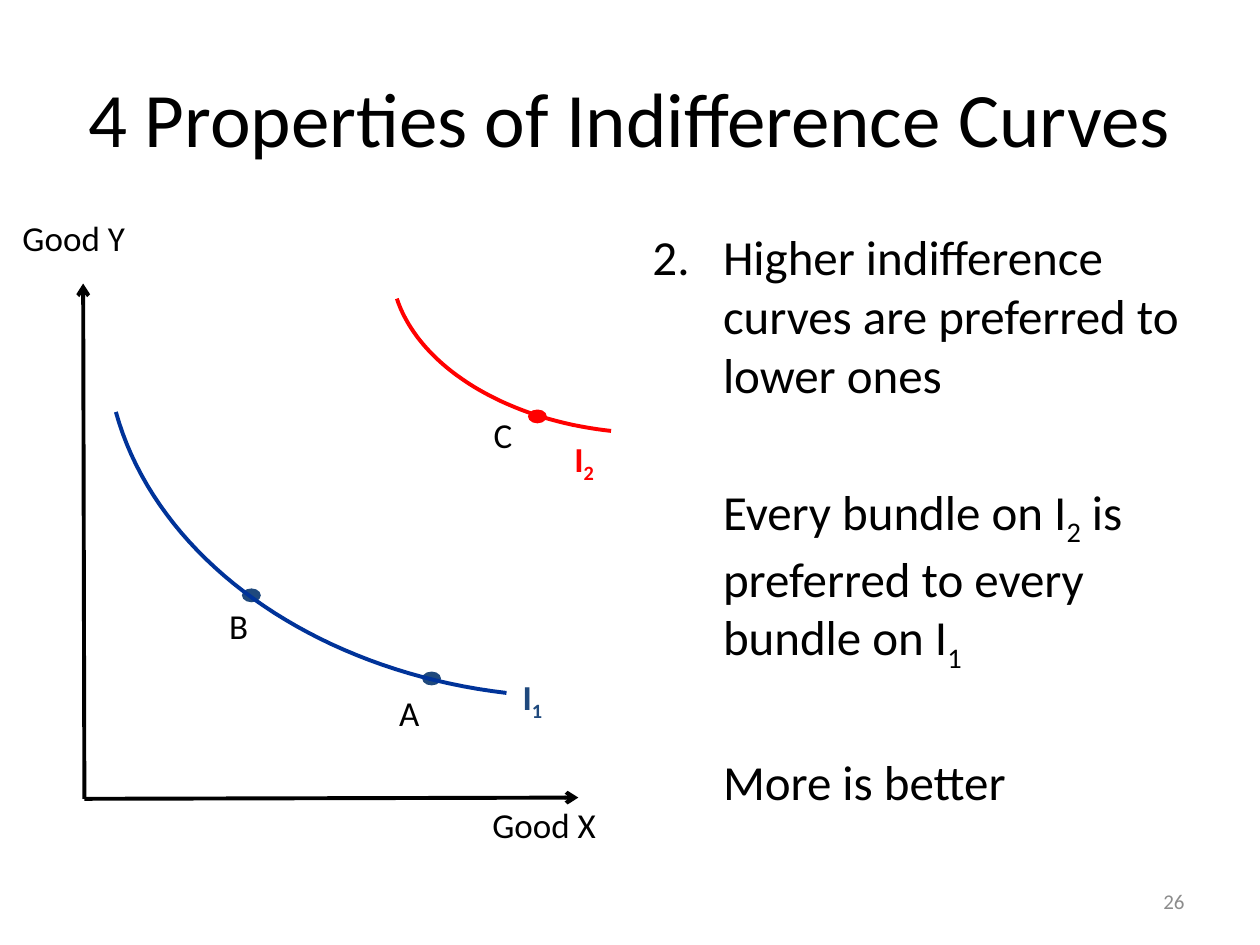
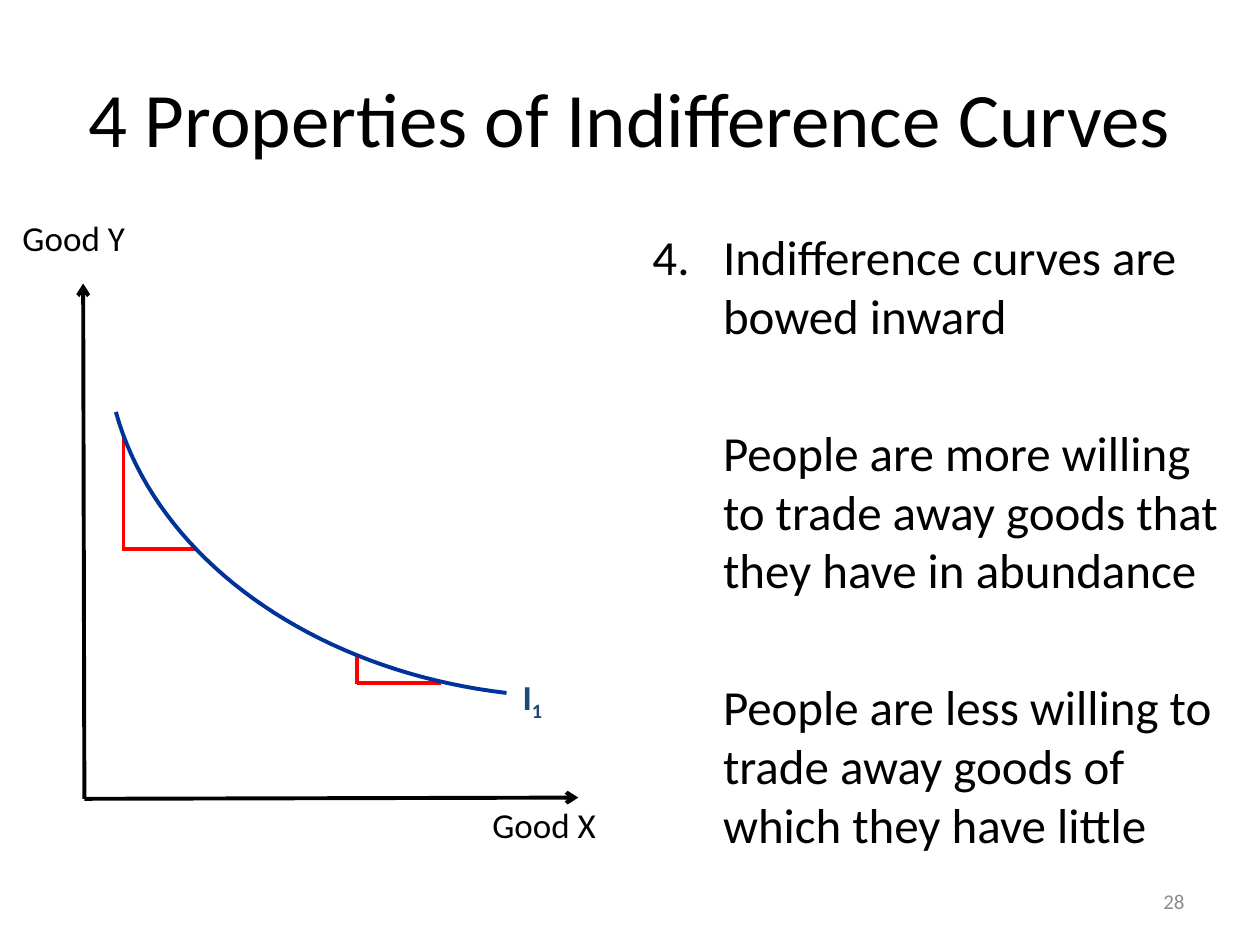
from lxml import etree
from pptx import Presentation
from pptx import util as u
from pptx.dml.color import RGBColor
from pptx.enum import shapes, text
from pptx.oxml.ns import qn

PX = 9144  # 100 px to the inch
FONT = "Calibri"
BLACK, RED, BLUE, NAVY, GREY = "000000", "FF0000", "003399", "1F497D", "8C8C8C"
LINE_WIDTH = u.Pt(2.25)
CURVE_STEPS = 40


def colour(value):
    return RGBColor.from_string(value)


def write(page, paragraphs, place, size=20, ink=BLACK, bold=False, align="LEFT",
          anchor="TOP", wrap=True, indent=0, number=None, gap=0):
    """Add a text box; parts between bars are set as subscripts."""
    box = page.shapes.add_textbox(*(n * PX for n in place))
    frame = box.text_frame
    frame.word_wrap = wrap
    frame.vertical_anchor = text.MSO_ANCHOR[anchor]
    for i, words in enumerate(paragraphs):
        para = frame.add_paragraph() if i else frame.paragraphs[0]
        para.alignment = text.PP_ALIGN[align]
        if indent:
            para.space_before = u.Pt(gap if i else size * 0.2)
            props = para._p.get_or_add_pPr()
            props.set("marL", str(indent * PX))
            props.set("indent", str(0 if i else -indent * PX))
            if number and not i:
                etree.SubElement(props, qn("a:buAutoNum"),
                                 type="arabicPeriod", startAt=str(number))
            else:
                etree.SubElement(props, qn("a:buNone"))
        for j, part in enumerate(words.split("|")):
            if not part:
                continue
            span = para.add_run()
            span.text = part
            span.font.name = FONT
            span.font.size = u.Pt(size)
            span.font.bold = bold
            span.font.color.rgb = colour(ink)
            if j % 2:
                span._r.get_or_add_rPr().set("baseline", "-25000")


# Parts of the diagram that both slides share: start, end, colour, arrowhead
axes = [((67, 634), (66, 225), BLACK, True),
        ((67, 634), (459, 633), BLACK, True)]
axis_labels = [("Good Y", (8, 167, 102, 44)), ("Good X", (381, 633, 103, 44))]

# Curves: four Bezier points, colour, name, name's place and colour
curve_1 = ([(402, 550), (248, 532), (124, 443), (92, 327)], BLUE,
           "I|1|", (405, 531, 37, 44), NAVY)
curve_2 = ([(485, 342), (401, 333), (333, 291), (315, 237)], RED,
           "I|2|", (446, 342, 37, 44), RED)

pages = [
    {
        "page_number": "26", "property": 2, "body": (508, 175, 442, 495),
        "points": ["Higher indifference curves are preferred to lower ones",
                   "Every bundle on I|2| is preferred to every bundle on I|1|",
                   "More is better"],
        "curves": [curve_1, curve_2],
        "bundles": [("A", (307, 544, 36, 44), (335, 533), NAVY),
                    ("B", (172, 475, 35, 44), (192, 467), NAVY),
                    ("C", (382, 323, 35, 44), (419, 325), RED)],
        "trades": [],
    },
    {
        "page_number": "28", "property": 4, "body": (508, 175, 475, 542),
        "points": ["Indifference curves are bowed inward",
                   "People are more willing to trade away goods that they have in abundance",
                   "People are less willing to trade away goods of which they have little"],
        "curves": [curve_1],
        "bundles": [],
        # Each trade: left, top, right, bottom of its step
        "trades": [(98, 346, 156, 436), (283, 520, 350, 542)],
    },
]

deck = Presentation()
deck.slide_width, deck.slide_height = 1000 * PX, 750 * PX

for content in pages:
    page = deck.slides.add_slide(deck.slide_layouts[6])

    # Title, numbered property and page number
    write(page, ["4 Properties of Indifference Curves"], (50, 30, 900, 125),
          size=44, align="CENTER", anchor="MIDDLE")
    write(page, content["points"], content["body"], size=28, indent=56,
          number=content["property"], gap=44.5)
    write(page, [content["page_number"]], (717, 695, 233, 40), size=12,
          ink=GREY, align="RIGHT", anchor="MIDDLE")

    # Axes and the steps of the trades
    lines = list(axes)
    for left, top, right, bottom in content["trades"]:
        lines.append(((left, top), (left, bottom + 1), RED, False))
        lines.append(((left, bottom), (right, bottom), RED, False))
    for start, end, ink, arrow in lines:
        line = page.shapes.add_connector(shapes.MSO_CONNECTOR.STRAIGHT,
                                         *(n * PX for n in start + end))
        line.line.color.rgb = colour(ink)
        line.line.width = LINE_WIDTH
        if arrow:
            etree.SubElement(line.line._get_or_add_ln(), qn("a:tailEnd"), type="arrow")
        etree.SubElement(line._element.spPr, qn("a:effectLst"))
    for label, place in axis_labels:
        write(page, [label], place, wrap=False)

    # Bundles on the curves
    for name, place, (left, top), ink in content["bundles"]:
        dot = page.shapes.add_shape(shapes.MSO_SHAPE.OVAL, left * PX, top * PX,
                                    15 * PX, 11 * PX)
        dot.shadow.inherit = False
        dot.fill.solid()
        dot.fill.fore_color.rgb = colour(ink)
        dot.line.fill.background()
        write(page, [name], place, wrap=False)

    # Indifference curves
    for anchors, ink, name, place, name_ink in content["curves"]:
        points = []
        for step in range(CURVE_STEPS + 1):
            t = step / CURVE_STEPS
            weights = ((1 - t) ** 3, 3 * t * (1 - t) ** 2, 3 * t ** 2 * (1 - t), t ** 3)
            points.append(tuple(round(PX * sum(w * n for w, n in zip(weights, axis)))
                                for axis in zip(*anchors)))
        builder = page.shapes.build_freeform(*points[0])
        builder.add_line_segments(points[1:], close=False)
        curve = builder.convert_to_shape()
        curve.shadow.inherit = False
        curve.fill.background()
        curve.line.color.rgb = colour(ink)
        curve.line.width = LINE_WIDTH
        write(page, [name], place, ink=name_ink, bold=True, wrap=False)

deck.save("out.pptx")
